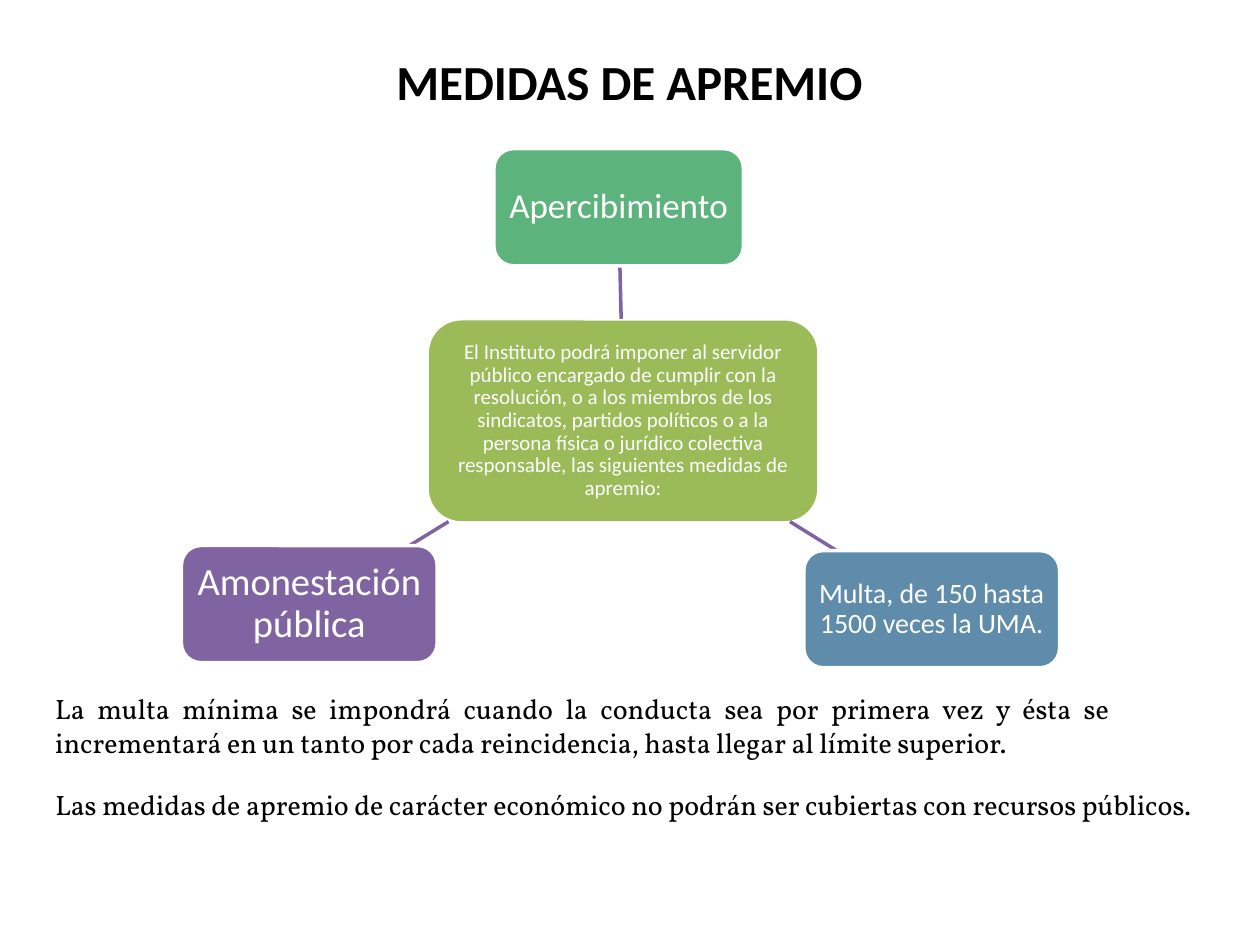
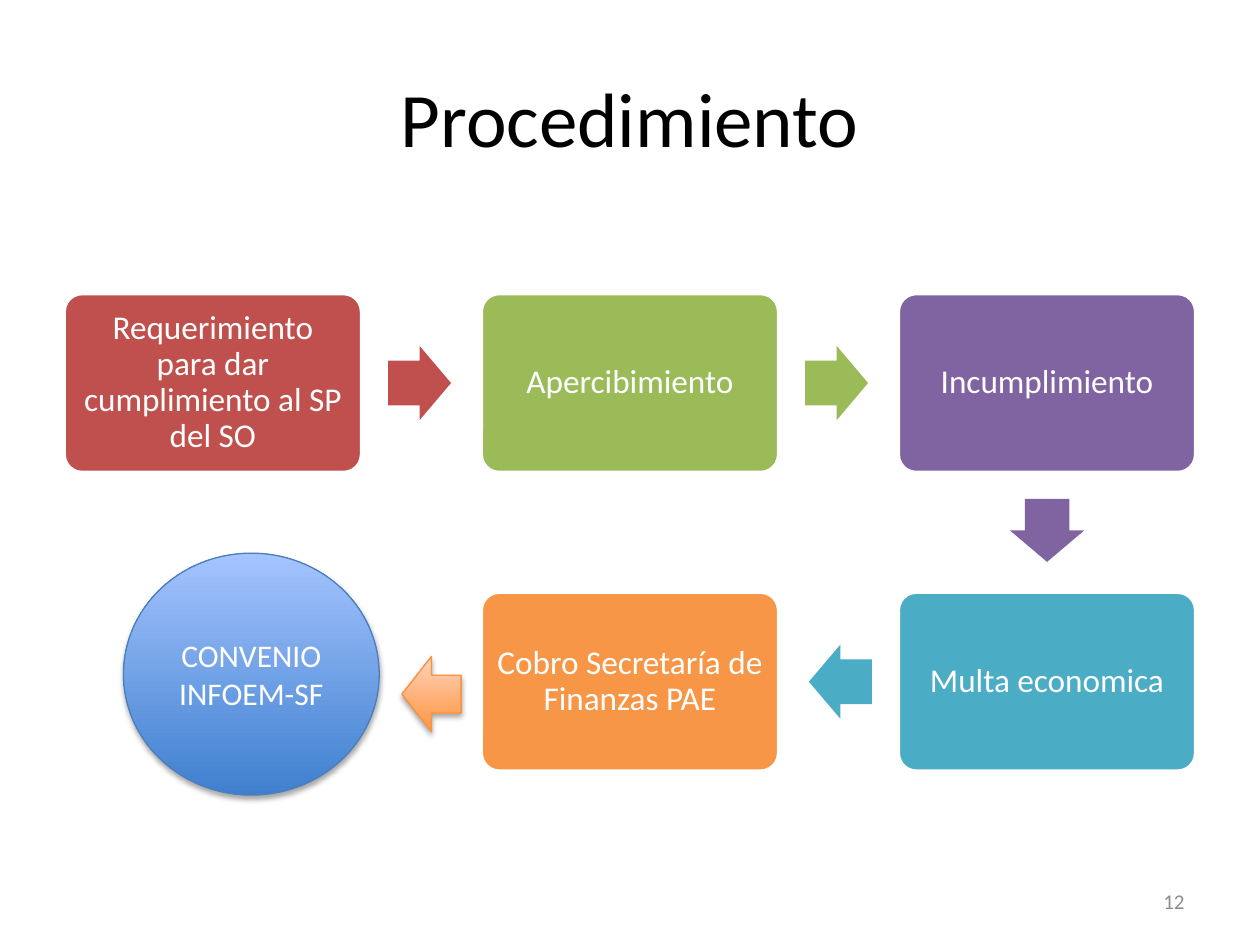
from lxml import etree
from pptx import Presentation
from pptx.dml.color import RGBColor
from pptx.enum.shapes import MSO_CONNECTOR, MSO_SHAPE
from pptx.enum.text import MSO_ANCHOR, MSO_AUTO_SIZE, PP_ALIGN
from pptx.oxml.ns import qn
from pptx.util import Inches, Pt

WHITE = RGBColor(0xFF, 0xFF, 0xFF)
BLACK = RGBColor(0x00, 0x00, 0x00)
GRAY = RGBColor(0x8C, 0x8C, 0x8C)
RED = RGBColor(0xC0, 0x50, 0x4D)
OLIVE = RGBColor(0x9B, 0xBB, 0x59)
PURPLE = RGBColor(0x80, 0x64, 0xA2)
TEAL = RGBColor(0x4B, 0xAC, 0xC6)
ORANGE = RGBColor(0xF7, 0x96, 0x46)
GREEN = RGBColor(0x5C, 0xB3, 0x7C)
STEEL = RGBColor(0x60, 0x8C, 0xAB)
BLUE_LINE = RGBColor(0x4B, 0x7E, 0xBC)
BLUE_GRADIENT = (RGBColor(0x3F, 0x80, 0xCE), RGBColor(0xA4, 0xC4, 0xFF))
ORANGE_LINE = RGBColor(0xF6, 0x92, 0x40)
ORANGE_GRADIENT = (RGBColor(0xFF, 0x95, 0x3E), RGBColor(0xFF, 0xD2, 0xBD))

BODY_FONT = "Calibri"
NOTE_FONT = "Vollkorn"


def set_attributes(target, values):
    for name, value in values.items():
        setattr(target, name, value)


def write_text(shape, text, size, color=WHITE, font=BODY_FONT, bold=False,
               align=PP_ALIGN.CENTER, spacing=1.0, inset=None,
               anchor=MSO_ANCHOR.MIDDLE, wrap=True):
    frame = shape.text_frame
    frame.text = text
    set_attributes(frame, {"word_wrap": wrap, "auto_size": MSO_AUTO_SIZE.NONE,
                           "vertical_anchor": anchor})
    if inset is not None:
        for side in ("left", "top", "right", "bottom"):
            setattr(frame, f"margin_{side}", Inches(inset))
    paragraph = frame.paragraphs[0]
    set_attributes(paragraph, {"alignment": align, "line_spacing": spacing})
    set_attributes(paragraph.font, {"name": font, "size": Pt(size), "bold": bold})
    paragraph.font.color.rgb = color


def add_title(slide, box, text, size, bold=False):
    title = slide.shapes.title
    set_attributes(title, dict(zip(("left", "top", "width", "height"), map(Inches, box))))
    write_text(title, text, size, BLACK, bold=bold)


def add_text(slide, box, text, size, **text_format):
    text_box = slide.shapes.add_textbox(*map(Inches, box))
    write_text(text_box, text, size, **text_format)


def add_preset(slide, preset, box, fill=None, line=None, line_width=2):
    shape = slide.shapes.add_shape(preset, *map(Inches, box))
    shape.shadow.inherit = False
    if fill is not None:
        shape.fill.solid()
        shape.fill.fore_color.rgb = fill
    if line is None:
        shape.line.fill.background()
    else:
        shape.line.color.rgb = line
        shape.line.width = Pt(line_width)
    return shape


def add_card(slide, box, fill, text, size, inset, corner=0.1667):
    card = add_preset(slide, MSO_SHAPE.ROUNDED_RECTANGLE, box, fill, WHITE)
    card.adjustments[0] = corner
    write_text(card, text, size, spacing=0.9, inset=inset)


def add_glossy(slide, preset, box, gradient, line):
    shape = add_preset(slide, preset, box, line=line, line_width=0.75)
    shape.fill.gradient()
    shape.fill.gradient_angle = 90
    for stop, color in zip(shape.fill.gradient_stops, gradient):
        stop.color.rgb = color
    effects = shape._element.spPr.find(qn("a:effectLst"))
    shadow = etree.SubElement(effects, qn("a:outerShdw"), blurRad="40000",
                              dist="23000", dir="5400000", rotWithShape="0")
    color = etree.SubElement(shadow, qn("a:srgbClr"), val="000000")
    etree.SubElement(color, qn("a:alpha"), val="35000")
    return shape


def add_spoke(slide, start, end):
    spoke = slide.shapes.add_connector(MSO_CONNECTOR.STRAIGHT, *map(Inches, start + end))
    spoke.line.color.rgb = PURPLE
    spoke.line.width = Pt(2)
    etree.SubElement(spoke._element.spPr, qn("a:effectLst"))


def add_measures_diagram(slide, left, top):
    add_card(slide, (left + 1.95, top + 1.35, 3.11, 1.62), OLIVE,
             "El Instituto podrá imponer al servidor público encargado de cumplir con la "
             "resolución, o a los miembros de los sindicatos, partidos políticos o a la "
             "persona física o jurídico colectiva responsable, las siguientes medidas de "
             "apremio:", 12, 0.03)
    measures = [
        ((2.48, 0, 1.98), GREEN, "Apercibimiento", 20, 0.06, (3.49, 1.35), (3.48, 0.93)),
        ((4.94, 3.19, 2.03), STEEL, "Multa, de 150 hasta 1500 veces la UMA.", 16, 0.04,
         (4.83, 2.96), (5.2, 3.19)),
        ((0, 3.15, 2.03), PURPLE, "Amonestación pública", 22, 0.06,
         (2.12, 2.96), (1.81, 3.15)),
    ]
    for (x, y, width), fill, text, size, inset, start, end in measures:
        add_spoke(slide, (left + start[0], top + start[1]), (left + end[0], top + end[1]))
        add_card(slide, (left + x, top + y, width, 0.93), fill, text, size, inset)


def add_procedure_flow(slide, left, top):
    width, height, column_step, row_step = 2.36, 1.42, 3.31, 2.37
    arrow_width, arrow_height, arrow_gap = 0.5, 0.59, 0.21
    reach = arrow_gap + arrow_width / 2
    steps = [
        (0, 0, RED, "Requerimiento para dar cumplimiento al SP del SO", 0),
        (1, 0, OLIVE, "Apercibimiento", 0),
        (2, 0, PURPLE, "Incumplimiento", 90),
        (2, 1, TEAL, "Multa economica", 180),
        (1, 1, ORANGE, "Cobro Secretaría de Finanzas PAE", None),
    ]
    directions = {0: (1, 0), 90: (0, 1), 180: (-1, 0)}
    for column, row, fill, text, turn in steps:
        x, y = left + column * column_step, top + row * row_step
        add_card(slide, (x, y, width, height), fill, text, 19, 0.08, corner=0.1)
        if turn is None:
            continue
        across, down = directions[turn]
        center_x = x + width / 2 + across * (width / 2 + reach)
        center_y = y + height / 2 + down * (height / 2 + reach)
        arrow = add_preset(slide, MSO_SHAPE.RIGHT_ARROW,
                           (center_x - arrow_width / 2, center_y - arrow_height / 2,
                            arrow_width, arrow_height), fill)
        arrow.adjustments[0] = 0.6
        arrow.adjustments[1] = 0.5
        arrow.rotation = turn


def add_agreement(slide, left, top):
    circle = add_glossy(slide, MSO_SHAPE.OVAL, (left, top, 2.03, 1.92),
                        BLUE_GRADIENT, BLUE_LINE)
    write_text(circle, "CONVENIO INFOEM-SF", 18)
    add_glossy(slide, MSO_SHAPE.LEFT_ARROW, (left + 2.21, top + 0.82, 0.47, 0.6),
               ORANGE_GRADIENT, ORANGE_LINE)


def build_measures_slide(slide):
    add_title(slide, (1.85, 0.36, 6.29, 0.57), "MEDIDAS DE APREMIO", 28, bold=True)
    add_measures_diagram(slide, 1.44, 1.18)
    note_format = {"color": BLACK, "font": NOTE_FONT, "anchor": MSO_ANCHOR.TOP}
    add_text(slide, (0.34, 5.44, 8.57, 0.64),
             "La multa mínima se impondrá cuando la conducta sea por primera vez y ésta se "
             "incrementará en un tanto por cada reincidencia, hasta llegar al límite superior.",
             16, align=PP_ALIGN.JUSTIFY, **note_format)
    add_text(slide, (0.34, 6.2, 9.55, 0.37),
             "Las medidas de apremio de carácter económico no podrán ser cubiertas con "
             "recursos públicos.", 16, align=PP_ALIGN.LEFT, wrap=False, **note_format)


def build_procedure_slide(slide):
    add_title(slide, (0.5, 0.3, 9, 1.25), "Procedimiento", 44)
    add_procedure_flow(slide, 0.51, 2.33)
    add_text(slide, (7.17, 6.95, 2.33, 0.4), "12", 12, color=GRAY, align=PP_ALIGN.RIGHT)
    add_agreement(slide, 0.98, 4.39)


def main():
    presentation = Presentation()
    presentation.slide_width = Inches(10)
    presentation.slide_height = Inches(7.5)
    title_only = presentation.slide_layouts[5]
    for build in (build_measures_slide, build_procedure_slide):
        build(presentation.slides.add_slide(title_only))
    presentation.save("out.pptx")


if __name__ == "__main__":
    main()
